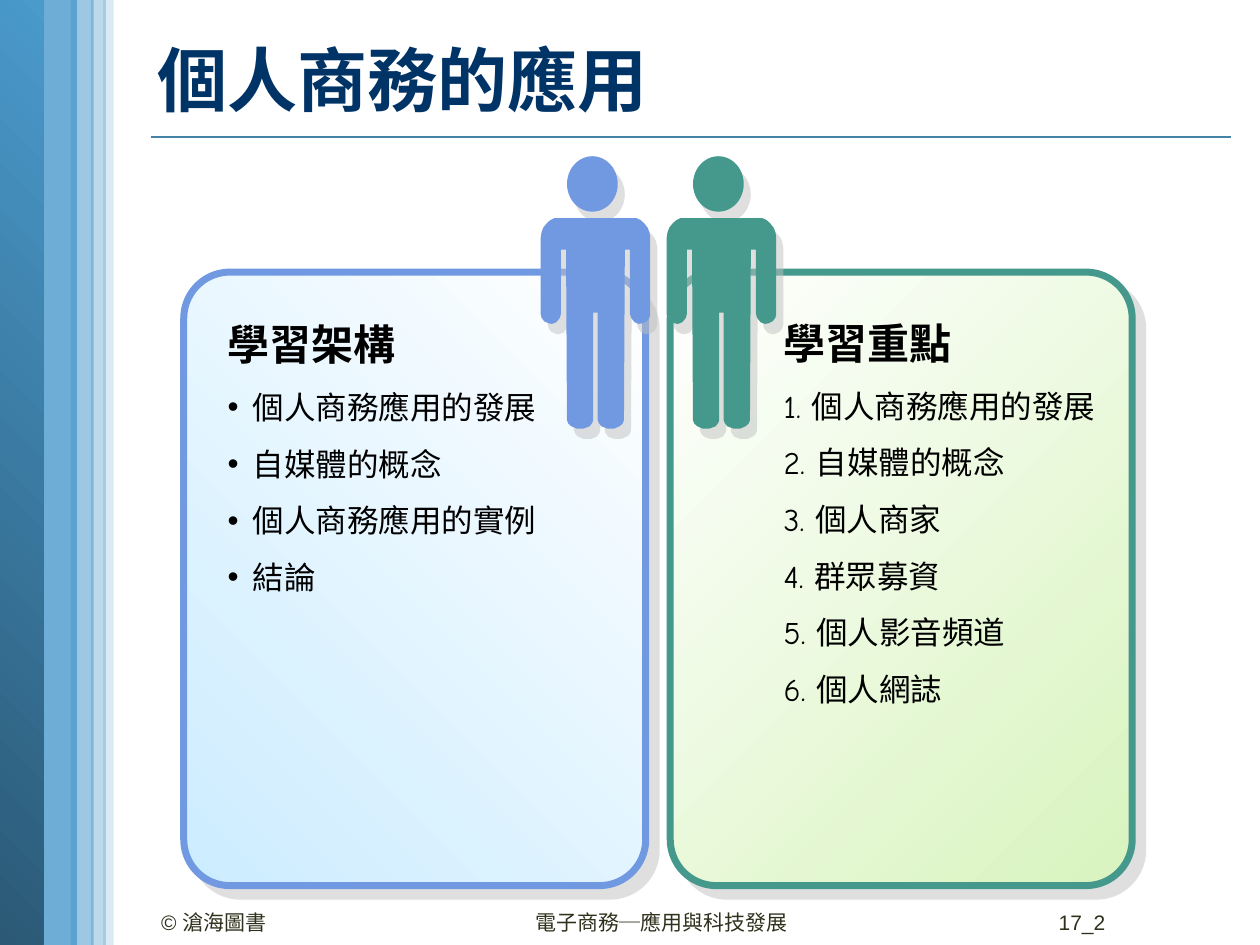
import lxml.etree
import pptx
import pptx.dml.color
import pptx.enum.shapes
import pptx.enum.text
import pptx.oxml.ns
import pptx.util

Pt = pptx.util.Pt
qn = pptx.oxml.ns.qn
Kind = pptx.enum.shapes.MSO_SHAPE
Align = pptx.enum.text.PP_ALIGN
Fit = pptx.enum.text.MSO_AUTO_SIZE

HUES = {
    "navy": "003366", "rule": "4582A7", "sky": "4A9ACC", "deep": "2B5976",
    "blue": "7099E2", "green": "44988C", "ice": "CCECFF", "lime": "D8F4BE",
    "white": "FFFFFF", "black": "000000", "foot": "30311D", "shade": "C0C0C0",
}
HEAD = {"size": Pt(24), "name": "Comic Neue", "bold": True}
ITEM = {"size": Pt(18), "name": "Comic Neue", "bold": False}
TITLE = {"size": Pt(40), "name": "Comic Neue", "bold": True}
FOOT = {"size": Pt(12), "name": "Arial"}

HALF = [
    (10, 0), (8, 0), (5.5, 1.2), (3.5, 3), (1.5, 5.5), (0.5, 8), (0, 11),
    (0, 55), (0.5, 57), (2, 59), (4.5, 60.2), (6.5, 60.5), (9, 59.5),
    (11, 57), (11.6, 54.5), (11.6, 18), (14.5, 18), (15, 115.5),
    (15.8, 117.5), (17.5, 119), (20.5, 120.3), (24.5, 120.3), (28, 119),
    (29.5, 117), (30, 115.5), (30, 54), (31.3, 54),
]
WIDE = 62.6


def color(name):
    return pptx.dml.color.RGBColor.from_string(HUES[name])


def paint(shape, hue, alpha=None):
    shape.shadow.inherit = False
    shape.line.fill.background()
    shape.fill.solid()
    shape.fill.fore_color.rgb = color(hue)
    if alpha:
        tint = shape.element.spPr.find(".//" + qn("a:srgbClr"))
        lxml.etree.SubElement(tint, qn("a:alpha"), val=str(alpha * 1000))


def blend(shape, start, end, angle):
    shape.shadow.inherit = False
    shape.line.fill.background()
    shape.fill.gradient()
    shape.fill.gradient_angle = angle
    for stop, hue in zip(shape.fill.gradient_stops, (start, end)):
        stop.color.rgb = color(hue)


def shade(shape, dist, angle):
    list_ = shape.element.spPr.find(qn("a:effectLst"))
    cast = lxml.etree.SubElement(
        list_, qn("a:outerShdw"), blurRad="0", dist=str(Pt(dist)),
        dir=str(angle * 60000), algn="ctr", rotWithShape="0")
    tint = lxml.etree.SubElement(cast, qn("a:srgbClr"), val=HUES["shade"])
    lxml.etree.SubElement(tint, qn("a:alpha"), val="50000")


def write(para, text, look, hue):
    run = para.add_run()
    run.text = text
    for key, value in look.items():
        setattr(run.font, key, value)
    run.font.color.rgb = color(hue)


def frame(slide, box, fit=Fit.NONE):
    text = slide.shapes.add_textbox(*map(Pt, box)).text_frame
    text.word_wrap = True
    text.auto_size = fit
    return text


def add_side(slide, box):
    left, top, wide, high = box
    bands = [(22, 22, 80), (0, 25, None), (59, 6, 20), (40.5, 13, 54),
             (52, 8.5, 37)]
    for x, w, alpha in bands:
        bar = slide.shapes.add_shape(
            Kind.RECTANGLE, Pt(left + x), Pt(top), Pt(w), Pt(high))
        if alpha:
            paint(bar, "sky", alpha)
        else:
            blend(bar, "deep", "sky", 45)


def add_title(slide, box):
    left, top, wide, high = box
    title = slide.shapes.title
    spots = zip(("left", "top", "width", "height"), box)
    for key, value in spots:
        setattr(title, key, Pt(value))
    text = title.text_frame
    text.auto_size = Fit.NONE
    text.vertical_anchor = pptx.enum.text.MSO_ANCHOR.MIDDLE
    para = text.paragraphs[0]
    para.alignment = Align.LEFT
    write(para, "個人商務的應用", TITLE, "navy")
    y = Pt(top + 73.5)
    rule = slide.shapes.add_connector(
        pptx.enum.shapes.MSO_CONNECTOR.STRAIGHT,
        Pt(left + 3.6), y, Pt(left + 620.6), y)
    rule.line.width = Pt(1)
    rule.line.color.rgb = color("rule")
    lxml.etree.SubElement(rule.element.spPr, qn("a:effectLst"))


def add_panel(slide, box, hue, start, end, angle):
    card = slide.shapes.add_shape(Kind.ROUNDED_RECTANGLE, *map(Pt, box))
    card.adjustments[0] = 0.1
    blend(card, start, end, angle)
    card.line.color.rgb = color(hue)
    card.line.width = Pt(4)
    shade(card, 8.5, 45)


def add_man(slide, left, top, hue):
    head = slide.shapes.add_shape(
        Kind.OVAL, Pt(left + 15), Pt(top), Pt(29), Pt(31.7))
    ring = HALF + [(WIDE - x, y) for x, y in reversed(HALF)]
    spots = [(Pt(left + x), Pt(top + 35.3 + y)) for x, y in ring]
    pen = slide.shapes.build_freeform(*spots[0])
    pen.add_line_segments(spots[1:], close=True)
    for part in (head, pen.convert_to_shape()):
        paint(part, hue)
        shade(part, 7.2, 56)


def add_list(slide, box, head, items, indent, bullet=None):
    text = frame(slide, box, Fit.SHAPE_TO_FIT_TEXT)
    first = text.paragraphs[0]
    first.line_spacing = 1.5
    write(first, head, HEAD, "black")
    for item in items:
        para = text.add_paragraph()
        props = para._p.get_or_add_pPr()
        props.set("marL", str(Pt(indent)))
        props.set("indent", str(Pt(-indent)))
        if bullet:
            lxml.etree.SubElement(props, qn("a:buFont"), typeface="Arial")
            lxml.etree.SubElement(props, qn("a:buChar"), char=bullet)
        para.line_spacing = 1.5
        write(para, item, ITEM, "black")


def add_foot(slide, box):
    left, top, wide, high = box
    parts = [(0, 168, "© 滄海圖書", Align.LEFT),
             (213.8, 170, "電子商務─應用與科技發展", Align.LEFT),
             (501.8, 52, "17_2", Align.RIGHT)]
    for x, w, words, align in parts:
        para = frame(slide, (left + x, top, w, high)).paragraphs[0]
        para.alignment = align
        write(para, words, FOOT, "foot")


def main():
    deck = pptx.Presentation()
    deck.slide_width, deck.slide_height = Pt(720), Pt(540)
    slide = deck.slides.add_slide(deck.slide_layouts[5])
    add_side(slide, (0, 0, 65, 540))
    add_title(slide, (82.8, 5, 626.4, 80))
    plan = ["個人商務應用的發展", "自媒體的概念", "個人商務應用的實例", "結論"]
    goals = ["個人商務應用的發展", "自媒體的概念", "個人商家", "群眾募資",
             "個人影音頻道", "個人網誌"]
    steps = [f"{rank}. {goal}" for rank, goal in enumerate(goals, 1)]
    add_panel(slide, (105, 155.5, 264, 350.6), "blue", "ice", "white", 45)
    add_man(slide, 309, 89.3, "blue")
    add_list(slide, (123, 164.2, 223, 181.4), "學習架構", plan, 14.4, "•")
    add_panel(slide, (383, 155.5, 264, 350.6), "green", "white", "lime", 315)
    add_list(slide, (440.8, 163.4, 203.8, 250.6), "學習重點", steps, 27.4)
    add_man(slide, 381, 89.3, "green")
    add_foot(slide, (85, 516.2, 554, 18.7))
    deck.save("out.pptx")


if __name__ == "__main__":
    main()
